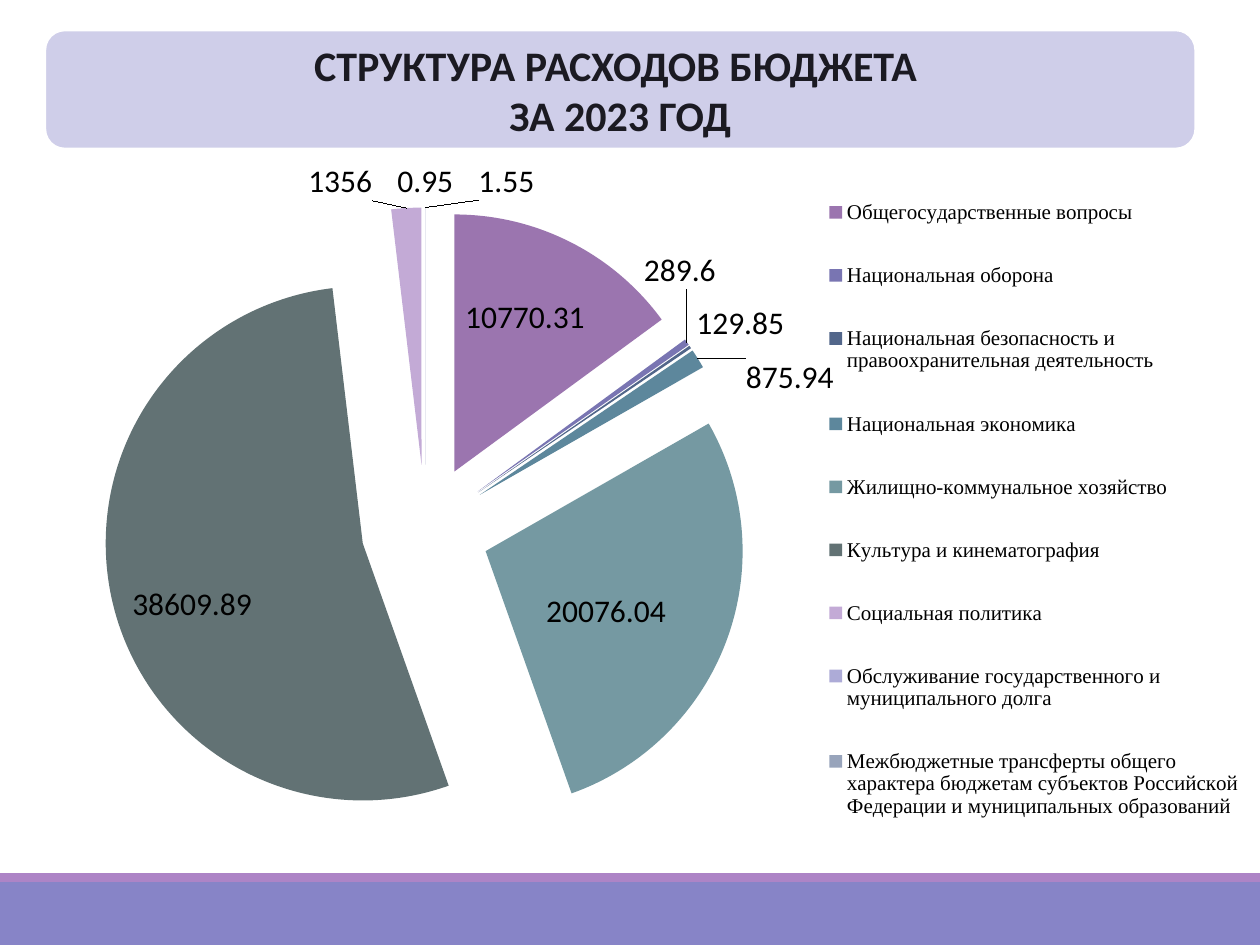
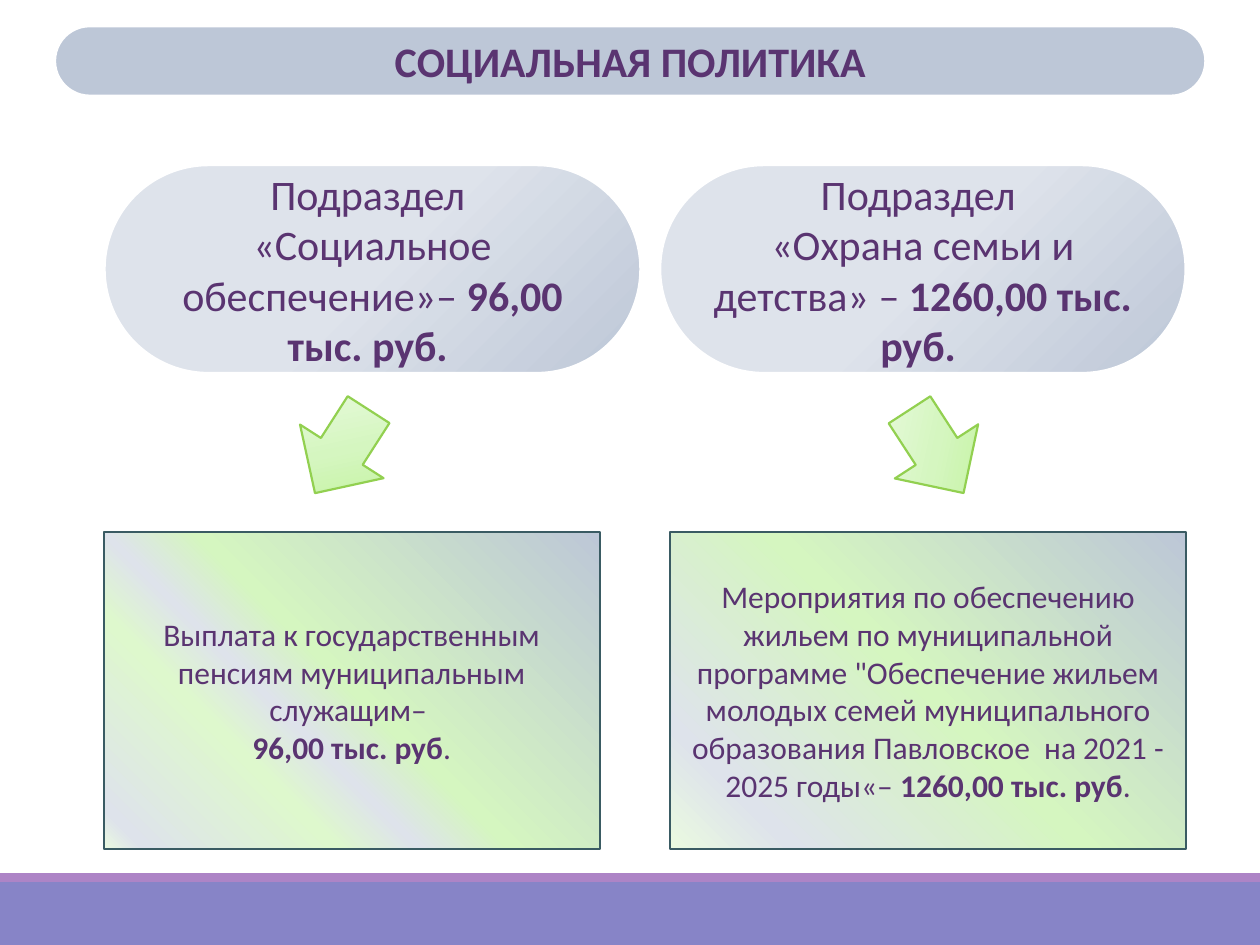
from dataclasses import dataclass
from typing import NamedTuple, Optional

from lxml.etree import SubElement
from pptx import Presentation
from pptx.chart.data import CategoryChartData
from pptx.dml.color import RGBColor
from pptx.enum.chart import XL_CHART_TYPE, XL_LABEL_POSITION, XL_LEGEND_POSITION
from pptx.enum.shapes import MSO_SHAPE
from pptx.enum.text import MSO_ANCHOR, PP_ALIGN
from pptx.oxml.ns import qn
from pptx.util import Cm, Pt

# Shared look
WIDTH, HEIGHT = 25.4, 19.05
FONT = "Calibri"
LEGEND_FONT = "Times New Roman"
WHITE, BLACK = "FFFFFF", "000000"
INK, PLUM = "1B1A22", "5A3471"
LAVENDER, STEEL = "CFCEE9", "BDC7D7"
VIOLET, MAUVE = "8784C7", "AD84C6"
GREEN, TEAL = "92D050", "3A5B63"
TITLE_SIZE, BODY_SIZE = 24, 18


class Box(NamedTuple):
    left: float
    top: float
    width: float
    height: float


class Run(NamedTuple):
    text: str
    bold: bool = False


@dataclass(frozen=True)
class Gradient:
    stops: tuple
    angle: Optional[int] = None  # None: circle spreading from the lower right corner


@dataclass(frozen=True)
class Panel:
    box: Box
    gradient: Gradient
    paragraphs: list


class LabelPlace(NamedTuple):
    position: XL_LABEL_POSITION
    x: float
    y: float


class Expense(NamedTuple):
    name: str
    value: float
    fill: str
    label: Optional[LabelPlace] = None


PILL_GRADIENT = Gradient(((0, STEEL), (50, "DEE3EB"), (91, "DEE3EB"), (100, "DFF3E3")))
ARROW_GRADIENT = Gradient(((0, "BEF297"), (50, "D5F6C0"), (100, "EAFAE0")), 225)

EXPENSES = [
    Expense("Общегосударственные вопросы", 10770.31, "9B75AF",
            LabelPlace(XL_LABEL_POSITION.CENTER, 0.01, -0.05)),
    Expense("Национальная оборона", 289.6, "7975B2"),
    Expense("Национальная безопасность и правоохранительная деятельность ", 129.85, "52668A"),
    Expense("Национальная экономика", 875.94, "5D879C"),
    Expense("Жилищно-коммунальное хозяйство", 20076.04, "7599A2",
            LabelPlace(XL_LABEL_POSITION.CENTER, 0, 0.02)),
    Expense("Культура и кинематография", 38609.89, "627274",
            LabelPlace(XL_LABEL_POSITION.INSIDE_END, 0.01, 0.03)),
    Expense("Социальная политика", 1356, "C3AAD6"),
    Expense("Обслуживание государственного и муниципального долга", 0.95, "ADABD7"),
    Expense("Межбюджетные трансферты общего характера бюджетам субъектов "
            "Российской Федерации и муниципальных образований", 1.55, "98A4BB"),
]

PILL_TOP, PILL_HEIGHT = 3.33, 4.19
DETAIL_TOP, DETAIL_HEIGHT = 10.72, 6.4

PILLS = [
    Panel(Box(2.11, PILL_TOP, 10.8, PILL_HEIGHT), PILL_GRADIENT, [
        [Run("Подраздел ")],
        [Run("«Социальное обеспечение»– "), Run("96,00 тыс. руб. ", True)],
    ]),
    Panel(Box(13.31, PILL_TOP, 10.59, PILL_HEIGHT), PILL_GRADIENT, [
        [Run("Подраздел ")],
        [Run("«Охрана семьи и детства» – "), Run("1260,00 тыс. руб. ", True)],
    ]),
]

DETAILS = [
    Panel(
        Box(2.09, DETAIL_TOP, 10, DETAIL_HEIGHT),
        Gradient(((0, STEEL), (50, "D5F6C0"), (61, "DEE3EB"), (71, "DEF8CD"),
                  (95, "DEE3EB"), (100, "EAFAE0")), 135),
        [
            [Run("Выплата к государственным пенсиям муниципальным служащим– ")],
            [Run("96,00 тыс. руб", True), Run(".")],
        ],
    ),
    Panel(
        Box(13.51, DETAIL_TOP, 10.4, DETAIL_HEIGHT),
        Gradient(((0, STEEL), (50, "D5F6C0"), (85, "DEE3EB"), (100, "EAFAE0")), 135),
        [[
            Run('Мероприятия по обеспечению жильем по муниципальной программе "Обеспечение '
                "жильем молодых семей муниципального образования Павловское  на 2021 - "
                "2025 годы«– "),
            Run("1260,00 тыс. руб", True),
            Run("."),
        ]],
    ),
]


def color(value: str) -> RGBColor:
    return RGBColor.from_string(value)


def set_font(font, size: float, value: str, name: str = FONT, bold: bool = False) -> None:
    font.name, font.size, font.bold = name, Pt(size), bold
    font.color.rgb = color(value)


def apply_gradient(shape, gradient: Gradient) -> None:
    """Give the shape a gradient with any number of stops."""
    shape.fill.gradient()
    fill = shape._element.spPr.find(qn("a:gradFill"))
    for child in list(fill):
        fill.remove(child)
    fill.set("rotWithShape", "1")
    stop_list = SubElement(fill, qn("a:gsLst"))
    for position, value in gradient.stops:
        stop = SubElement(stop_list, qn("a:gs"), pos=str(position * 1000))
        SubElement(stop, qn("a:srgbClr"), val=value)
    if gradient.angle is None:
        circle = SubElement(fill, qn("a:path"), path="circle")
        SubElement(circle, qn("a:fillToRect"), l="100000", t="100000")
        SubElement(fill, qn("a:tileRect"), r="-100000", b="-100000")
    else:
        SubElement(fill, qn("a:lin"), ang=str(gradient.angle * 60000), scaled="0")


def add_box(slide, kind: MSO_SHAPE, box: Box, fill, line: Optional[str] = None):
    shape = slide.shapes.add_shape(kind, *map(Cm, box))
    shape.shadow.inherit = False
    if isinstance(fill, Gradient):
        apply_gradient(shape, fill)
    else:
        shape.fill.solid()
        shape.fill.fore_color.rgb = color(fill)
    if line:
        shape.line.color.rgb = color(line)
        shape.line.width = Pt(1.25)
    else:
        shape.line.fill.background()
    return shape


def write_text(shape, paragraphs: list, *, size: float, value: str) -> None:
    """Fill a shape with centred paragraphs, each a list of runs."""
    frame = shape.text_frame
    frame.word_wrap = True
    frame.vertical_anchor = MSO_ANCHOR.MIDDLE
    for index, runs in enumerate(paragraphs):
        paragraph = frame.add_paragraph() if index else frame.paragraphs[0]
        paragraph.alignment = PP_ALIGN.CENTER
        for part in runs:
            run = paragraph.add_run()
            run.text = part.text
            set_font(run.font, size, value, bold=part.bold)


def add_title(slide, box: Box, lines: list, *, fill: str, value: str):
    shape = add_box(slide, MSO_SHAPE.ROUNDED_RECTANGLE, box, fill, WHITE)
    write_text(shape, [[Run(line, True)] for line in lines], size=TITLE_SIZE, value=value)
    return shape


def add_banded_slide(presentation):
    """Add a blank slide with the two bands along its foot."""
    slide = presentation.slides.add_slide(presentation.slide_layouts[6])
    add_box(slide, MSO_SHAPE.RECTANGLE, Box(0, 17.78, WIDTH, 1.27), VIOLET)
    add_box(slide, MSO_SHAPE.RECTANGLE, Box(0, 17.6, WIDTH, 0.18), MAUVE)
    return slide


def place(parent, index: int, fractions: dict, modes: str = "", inner: bool = False) -> None:
    """Replace a chart part's layout by a manual one, in fractions of the chart."""
    for old in parent.findall(qn("c:layout")):
        parent.remove(old)
    layout = SubElement(parent, qn("c:layout"))
    manual = SubElement(layout, qn("c:manualLayout"))
    if inner:
        SubElement(manual, qn("c:layoutTarget"), val="inner")
    for axis in modes:
        SubElement(manual, qn(f"c:{axis}Mode"), val="edge")
    for tag, fraction in fractions.items():
        SubElement(manual, qn(f"c:{tag}"), val=str(fraction))
    parent.insert(index, layout)


def add_expense_pie(slide) -> None:
    data = CategoryChartData()
    data.categories = [expense.name for expense in EXPENSES]
    data.add_series("Series 1", [expense.value for expense in EXPENSES])
    chart = slide.shapes.add_chart(
        XL_CHART_TYPE.PIE, *map(Cm, Box(0.1, 2.92, 25.3, 15.8)), data
    ).chart
    chart.has_title = False
    set_font(chart.font, BODY_SIZE, BLACK)

    # Slices
    plot = chart.plots[0]
    plot.vary_by_categories = True
    series = plot.series[0]
    name = series._element.find(qn("c:tx"))
    explosion = SubElement(series._element, qn("c:explosion"), val="25")
    name.addnext(explosion)
    labels = series.data_labels
    labels.show_value = True
    labels.position = XL_LABEL_POSITION.BEST_FIT
    set_font(labels.font, BODY_SIZE, BLACK)
    for index, expense in enumerate(EXPENSES):
        point = series.points[index]
        point.format.fill.solid()
        point.format.fill.fore_color.rgb = color(expense.fill)
        if expense.label:
            set_font(point.data_label.font, BODY_SIZE, BLACK)
            point.data_label.position = expense.label.position
            label = labels._element.xpath(f"c:dLbl[c:idx/@val='{index}']")[0]
            place(label, 1, {"x": expense.label.x, "y": expense.label.y})

    # Legend and plot placement
    chart.has_legend = True
    legend = chart.legend
    legend.position = XL_LEGEND_POSITION.RIGHT
    legend.include_in_layout = False
    set_font(legend.font, 12, BLACK, LEGEND_FONT)
    place(legend._element, 1, {"x": 0.65, "y": 0.02, "w": 0.34, "h": 0.89}, "xy")
    place(chart._chartSpace.chart.plotArea, 0,
          {"x": 0.06, "y": 0.08, "w": 0.55, "h": 0.82}, "xy", inner=True)


def build_expense_slide(presentation) -> None:
    slide = add_banded_slide(presentation)
    add_expense_pie(slide)
    add_title(slide, Box(0.91, 0.61, 23.19, 2.39),
              ["СТРУКТУРА РАСХОДОВ БЮДЖЕТА ", "ЗА 2023 ГОД"], fill=LAVENDER, value=INK)


def build_social_slide(presentation) -> None:
    slide = add_banded_slide(presentation)
    title = add_title(slide, Box(1.11, 0.53, 23.19, 1.4), ["СОЦИАЛЬНАЯ ПОЛИТИКА"],
                      fill=STEEL, value=PLUM)
    title.adjustments[0] = 0.5

    # Budget subsections
    for panel in PILLS:
        pill = add_box(slide, MSO_SHAPE.ROUNDED_RECTANGLE, panel.box, panel.gradient, WHITE)
        pill.adjustments[0] = 0.5
        write_text(pill, panel.paragraphs, size=TITLE_SIZE, value=PLUM)

    # Arrows down to the details
    for left, rotation in ((5.89, 32.7), (17.88, 327)):
        arrow = add_box(slide, MSO_SHAPE.DOWN_ARROW, Box(left, 8.1, 2, 2), ARROW_GRADIENT, GREEN)
        arrow.rotation = rotation

    # Payment details
    for panel in DETAILS:
        detail = add_box(slide, MSO_SHAPE.RECTANGLE, panel.box, panel.gradient, TEAL)
        write_text(detail, panel.paragraphs, size=BODY_SIZE, value=PLUM)


def main() -> None:
    presentation = Presentation()
    presentation.slide_width, presentation.slide_height = Cm(WIDTH), Cm(HEIGHT)
    build_expense_slide(presentation)
    build_social_slide(presentation)
    presentation.save("out.pptx")


if __name__ == "__main__":
    main()
